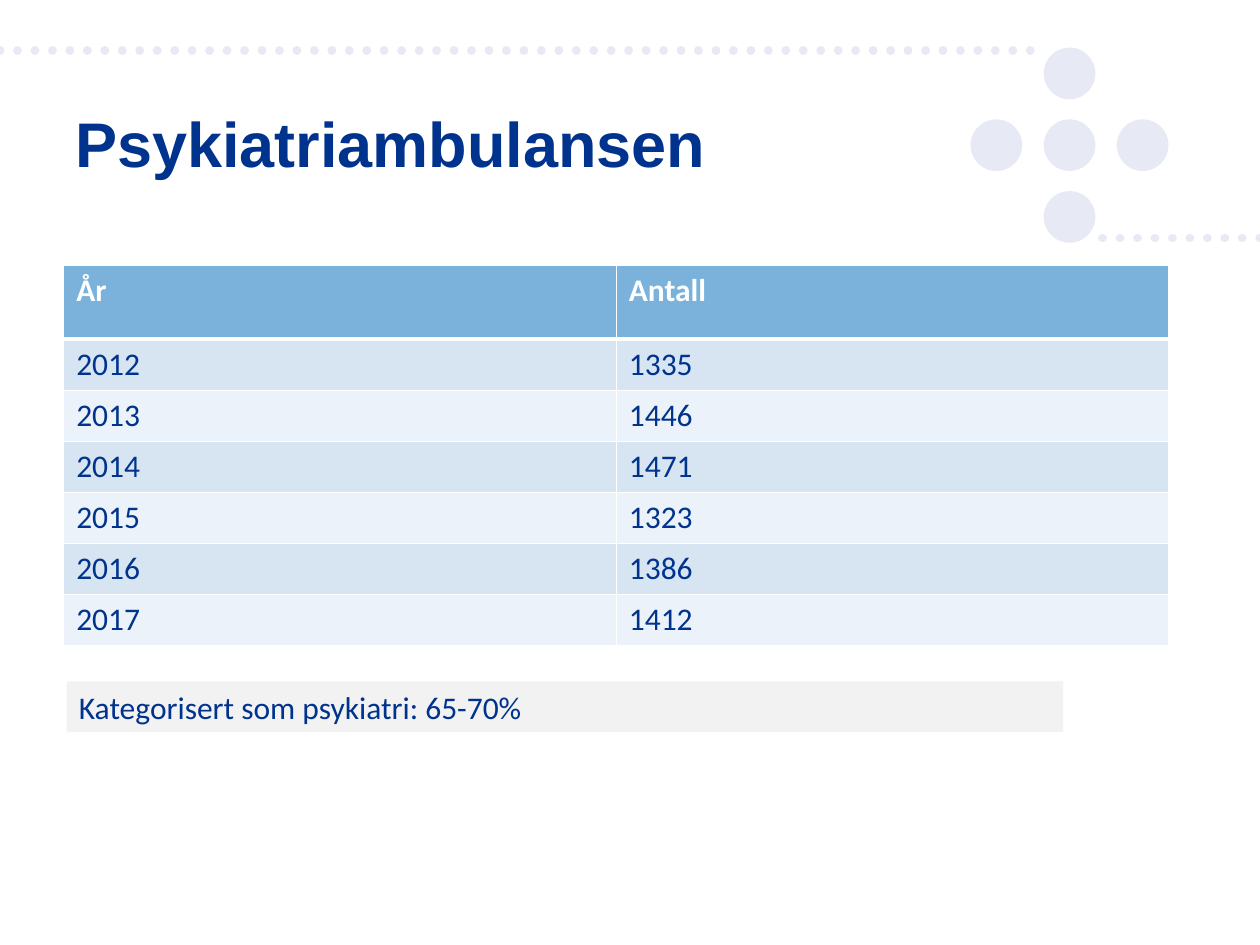
from lxml import etree
from pptx import Presentation
from pptx.dml.color import RGBColor
from pptx.enum.dml import MSO_LINE
from pptx.enum.shapes import MSO_CONNECTOR, MSO_SHAPE
from pptx.enum.text import MSO_ANCHOR, PP_ALIGN
from pptx.oxml.ns import qn
from pptx.util import Pt

STRAIGHT = MSO_CONNECTOR.STRAIGHT
OVAL, RECTANGLE = MSO_SHAPE.OVAL, MSO_SHAPE.RECTANGLE
DOTTED = MSO_LINE.ROUND_DOT
MIDDLE, LEFT = MSO_ANCHOR.MIDDLE, PP_ALIGN.LEFT
NAVY, PALE, WHITE = "00338D", "E7E9F5", "FFFFFF"
HEADER_BLUE, BANDS = "7AB2DC", ("D7E4F2", "ECF2F9")


def color(hex_value):
    return RGBColor.from_string(hex_value)


def write(frame, text, font="Calibri", size=18, ink=NAVY, bold=False):
    paragraph = frame.paragraphs[0]
    paragraph.alignment = LEFT
    run = paragraph.add_run()
    run.text = text
    run.font.name = font
    run.font.size = Pt(size)
    run.font.bold = bold
    run.font.color.rgb = color(ink)


prs = Presentation()
prs.slide_width, prs.slide_height = Pt(720), Pt(540)
slide = prs.slides.add_slide(prs.slide_layouts[6])
shapes = slide.shapes

# Dotted rules with round dots
for start, end, y in ((0, 598.5, 28.8), (630, 745, 136)):
    rule = shapes.add_connector(STRAIGHT, Pt(start), Pt(y), Pt(end), Pt(y))
    rule.line.color.rgb = color(PALE)
    rule.line.width = Pt(5)
    rule.line.dash_style = DOTTED
    rule.line._get_or_add_ln().set("cap", "rnd")
    etree.SubElement(rule._element.spPr, qn("a:effectLst"))

# Cross of five circles
cross = shapes.add_group_shape()
for column, row in ((0, -1), (0, 1), (0, 0), (-1, 0), (1, 0)):
    circle = cross.shapes.add_shape(
        OVAL, Pt(596.4 + 41.8 * column), Pt(68.2 + 41 * row), Pt(29.5), Pt(29.5))
    circle.shadow.inherit = False
    circle.fill.solid()
    circle.fill.fore_color.rgb = color(PALE)
    circle.line.fill.background()

# Title
title = shapes.add_textbox(Pt(36), Pt(56), Pt(503), Pt(51)).text_frame
title.word_wrap = True
title.vertical_anchor = MIDDLE
write(title, "Psykiatriambulansen", font="Arial", size=36, bold=True)

# Table of yearly counts
counts = [("År", "Antall"), ("2012", "1335"), ("2013", "1446"), ("2014", "1471"),
          ("2015", "1323"), ("2016", "1386"), ("2017", "1412")]
table = shapes.add_table(len(counts), 2, Pt(36.4), Pt(151.3), Pt(631.6), Pt(218)).table
for column in table.columns:
    column.width = Pt(315.8)
for i, values in enumerate(counts):
    header = i == 0
    table.rows[i].height = Pt(42.5 if header else 29.2)
    for j, value in enumerate(values):
        cell = table.cell(i, j)
        for side in ("lnL", "lnR", "lnT", "lnB"):
            thick = (i, side) in ((0, "lnB"), (1, "lnT"))
            border = etree.SubElement(cell._tc.get_or_add_tcPr(), qn("a:" + side),
                                      w=str(Pt(3 if thick else 1)))
            border_fill = etree.SubElement(border, qn("a:solidFill"))
            etree.SubElement(border_fill, qn("a:srgbClr"), val=WHITE)
        cell.fill.solid()
        cell.fill.fore_color.rgb = color(HEADER_BLUE if header else BANDS[(i - 1) % 2])
        write(cell.text_frame, value, ink=WHITE if header else NAVY, bold=header)

# Note under the table
note = shapes.add_shape(RECTANGLE, Pt(38), Pt(389.3), Pt(569.5), Pt(29.1))
note.shadow.inherit = False
note.fill.solid()
note.fill.fore_color.rgb = color("F2F2F2")
note.line.fill.background()
note.text_frame.word_wrap = True
note.text_frame.vertical_anchor = MIDDLE
write(note.text_frame, "Kategorisert som psykiatri: 65-70%")

prs.save("out.pptx")
